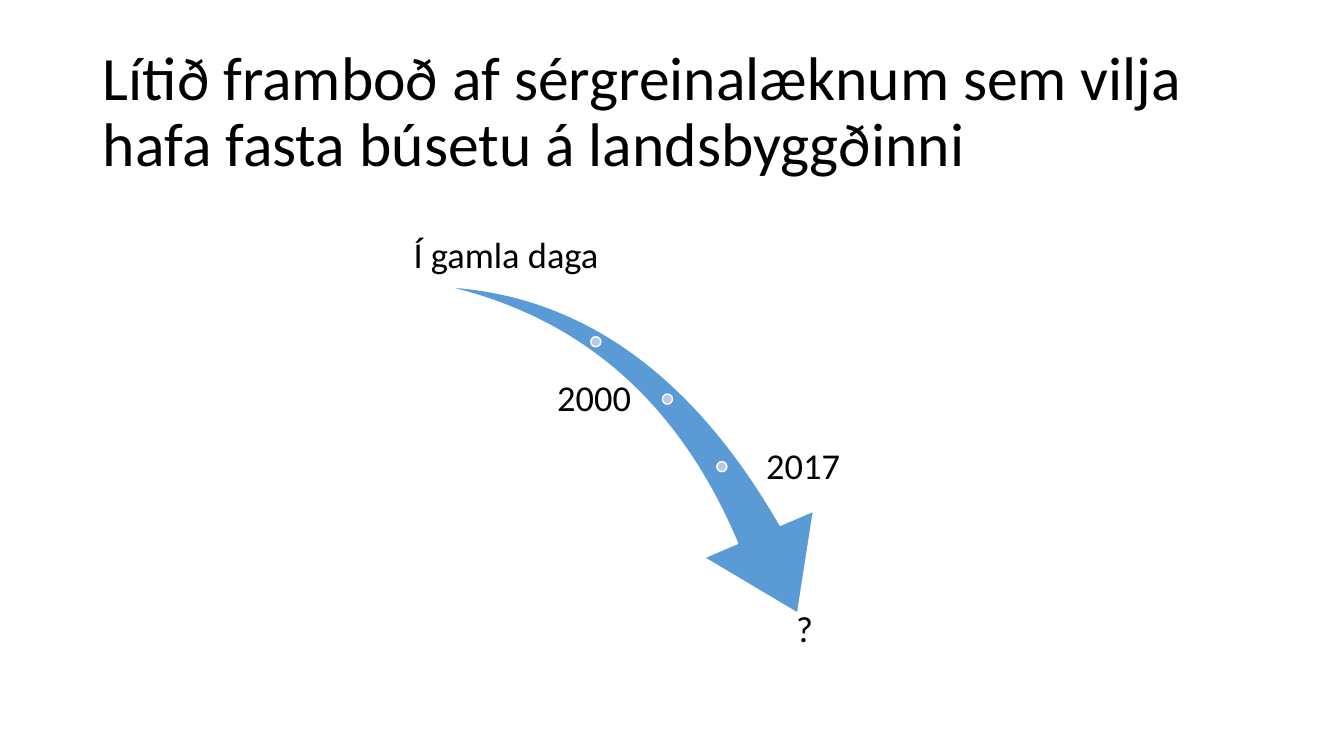
from dataclasses import dataclass

from pptx import Presentation
from pptx.dml.color import RGBColor
from pptx.enum.shapes import MSO_SHAPE as SHAPE
from pptx.enum.text import MSO_ANCHOR as ANCHOR, MSO_AUTO_SIZE as FIT, PP_ALIGN as ALIGN
from pptx.util import Inches, Pt


@dataclass(frozen=True)
class Theme:
    font: str = "Calibri"
    text: str = "000000"
    arrow: str = "5B9BD5"
    dot: str = "B5CBE7"
    outline: str = "FFFFFF"
    title_size: int = 44
    label_size: int = 26
    line_spacing: float = 0.9
    label_inset: float = 0.04


class SlideBuilder:
    def __init__(self, prs, theme):
        self.theme = theme
        self.slide = prs.slides.add_slide(prs.slide_layouts[5])

    def set_text(self, tf, text, size, align, anchor):
        tf.word_wrap = True
        tf.auto_size = FIT.NONE
        tf.vertical_anchor = anchor
        p = tf.paragraphs[0]
        p.alignment = align
        p.line_spacing = self.theme.line_spacing
        r = p.add_run()
        r.text = text
        r.font.name = self.theme.font
        r.font.size = Pt(size)
        r.font.color.rgb = RGBColor.from_string(self.theme.text)

    def title(self, text, left, top, width, height):
        sp = self.slide.shapes.title
        sp.left, sp.top = Inches(left), Inches(top)
        sp.width, sp.height = Inches(width), Inches(height)
        self.set_text(sp.text_frame, text, self.theme.title_size, ALIGN.LEFT, ANCHOR.MIDDLE)

    def label(self, text, left, top, width, height, align, anchor):
        box = self.slide.shapes.add_textbox(
            Inches(left), Inches(top), Inches(width), Inches(height))
        tf = box.text_frame
        inset = Inches(self.theme.label_inset)
        tf.margin_left = tf.margin_right = tf.margin_top = tf.margin_bottom = inset
        self.set_text(tf, text, self.theme.label_size, align, anchor)

    def shape(self, kind, left, top, width, height, fill):
        sp = self.slide.shapes.add_shape(
            kind, Inches(left), Inches(top), Inches(width), Inches(height))
        sp.shadow.inherit = False
        sp.fill.solid()
        sp.fill.fore_color.rgb = RGBColor.from_string(fill)
        sp.line.color.rgb = RGBColor.from_string(self.theme.outline)
        sp.line.width = Pt(1)
        return sp

    def swoosh(self, left, top, width, height, rotation, adjustments):
        sp = self.shape(SHAPE.SWOOSH_ARROW, left, top, width, height, self.theme.arrow)
        sp.rotation = rotation
        for i, value in enumerate(adjustments):
            sp.adjustments[i] = value

    def dot(self, left, top, size=0.1):
        self.shape(SHAPE.OVAL, left, top, size, size, self.theme.dot)


def main():
    prs = Presentation()
    prs.slide_width, prs.slide_height = Inches(13.33), Inches(7.5)
    page = SlideBuilder(prs, Theme())

    # Title
    page.title("Lítið framboð af sérgreinalæknum sem vilja hafa fasta búsetu á landsbyggðinni",
               0.92, 0.4, 11.5, 1.45)

    # Falling arrow with its milestones
    page.swoosh(4.32, 2.97, 4.11, 2.86, 73.3, (0.16, 0.31))
    for left, top in ((5.86, 3.34), (6.57, 3.91), (7.11, 4.58)):
        page.dot(left, top)

    # Labels along the arrow
    for text, left, top, width, align, anchor in (
        ("Í gamla daga", 4.05, 2.02, 1.94, ALIGN.CENTER, ANCHOR.BOTTOM),
        ("2000", 4.05, 3.59, 2.25, ALIGN.RIGHT, ANCHOR.MIDDLE),
        ("2017", 7.56, 4.26, 1.73, ALIGN.LEFT, ANCHOR.MIDDLE),
        ("?", 6.67, 6.02, 2.62, ALIGN.CENTER, ANCHOR.TOP),
    ):
        page.label(text, left, top, width, 0.76, align, anchor)

    prs.save("out.pptx")


if __name__ == "__main__":
    main()
